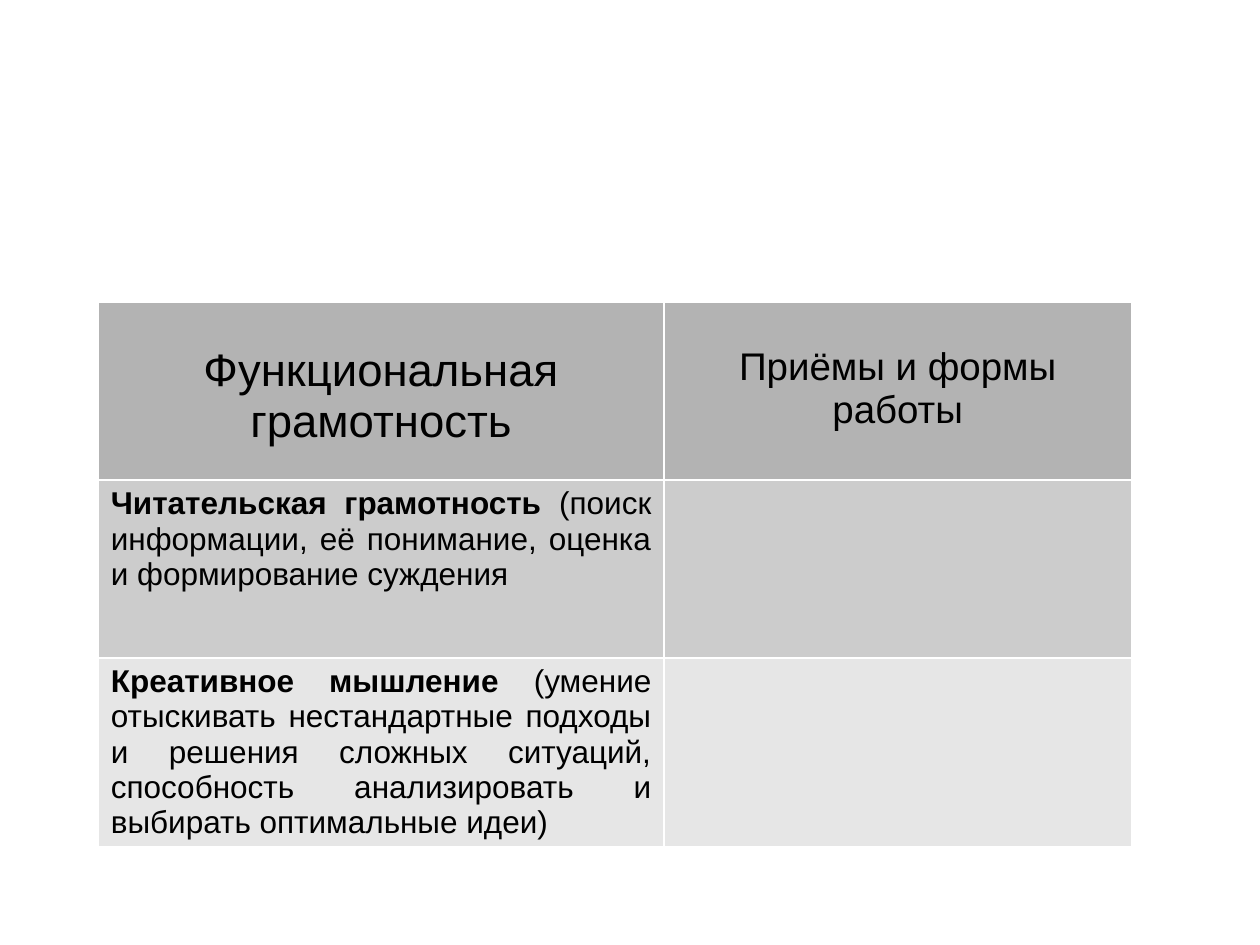
"""Build a slide with a table of literacy kinds and working methods."""
from pptx import Presentation
from pptx.dml.color import RGBColor as Rgb
from pptx.enum.text import PP_ALIGN as Align
from pptx.oxml import parse_xml
from pptx.oxml.ns import nsdecls
from pptx.util import Inches, Pt


def paint(fill, tone):
    fill.solid()
    fill.fore_color.rgb = Rgb.from_string(tone)


def edge(cell, tone, width):
    for at, side in enumerate(("lnL", "lnR", "lnT", "lnB")):
        line = parse_xml(
            f'<a:{side} {nsdecls("a")} w="{Pt(width)}"><a:solidFill>'
            f'<a:srgbClr val="{tone}"/></a:solidFill></a:{side}>')
        cell._tc.get_or_add_tcPr().insert(at, line)


deck = Presentation()
deck.slide_width, deck.slide_height = Inches(10), Inches(7.5)
slide = deck.slides.add_slide(deck.slide_layouts[6])

wide, high = [4.49, 3.71], 1.41
tones = ["B3B3B3", "CCCCCC", "E6E6E6"]
head = {"align": Align.CENTER, "top": 0.34}
body = {"align": Align.JUSTIFY, "top": 0.05}
rows = [
    [[("Функциональная грамотность", 26, False)],
     [("Приёмы и формы работы", 22, False)]],
    [[("Читательская грамотность", 18, True),
      (" (поиск информации, её понимание, оценка и формирование суждения", 18, False)], []],
    [[("Креативное мышление", 18, True),
      (" (умение отыскивать нестандартные подходы и решения сложных ситуаций, "
       "способность анализировать и выбирать оптимальные идеи)", 18, False)], []],
]

table = slide.shapes.add_table(
    len(rows), len(wide), Inches(0.78), Inches(2.4),
    Inches(sum(wide)), Inches(high * len(rows))).table
table.first_row = table.horz_banding = False
for col, width in zip(table.columns, wide):
    col.width = Inches(width)

for r, (row, tone) in enumerate(zip(rows, tones)):
    table.rows[r].height = Inches(high)
    look = body if r else head
    for c, parts in enumerate(row):
        cell = table.cell(r, c)
        paint(cell.fill, tone)
        edge(cell, "FFFFFF", 1.13)
        cell.margin_top = Inches(look["top"])
        para = cell.text_frame.paragraphs[0]
        para.alignment = look["align"]
        for text, size, bold in parts:
            run = para.add_run()
            run.text = text
            for key, value in {"name": "Arial", "size": Pt(size), "bold": bold}.items():
                setattr(run.font, key, value)
            paint(run.font.fill, "000000")

deck.save("out.pptx")
